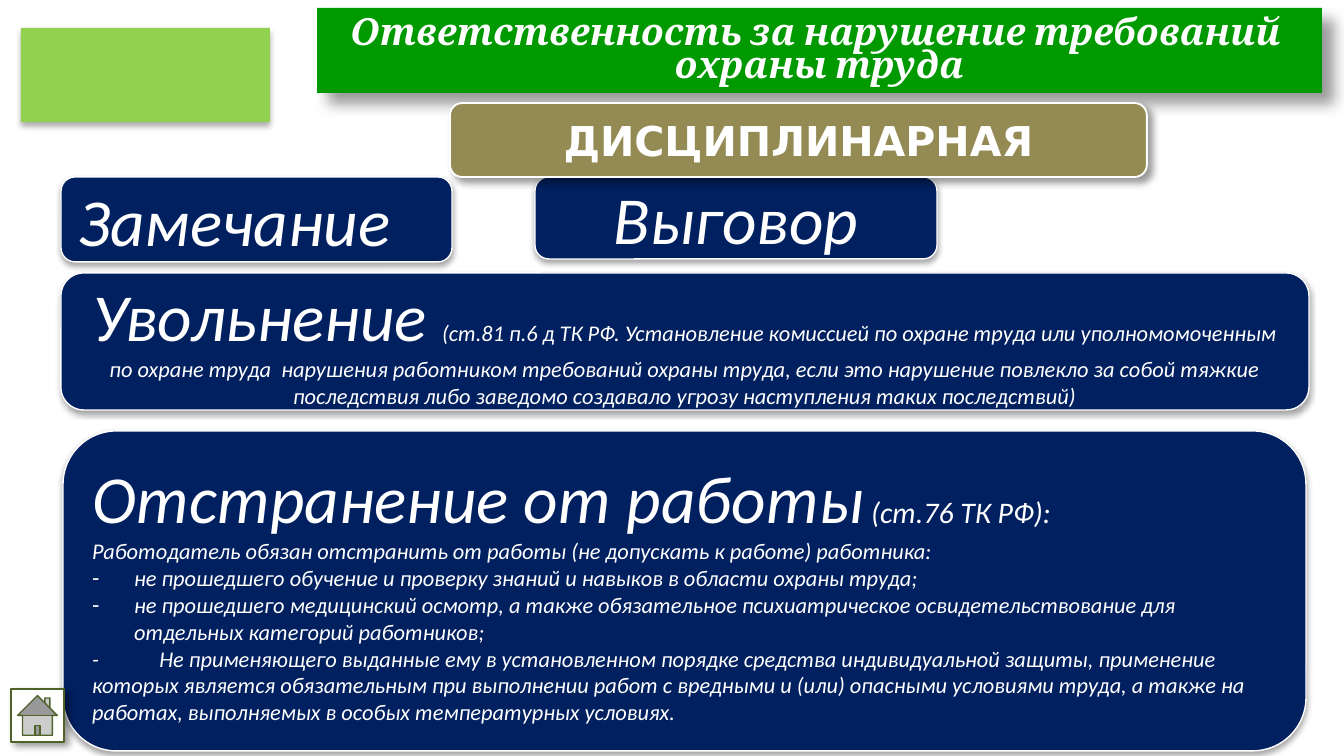
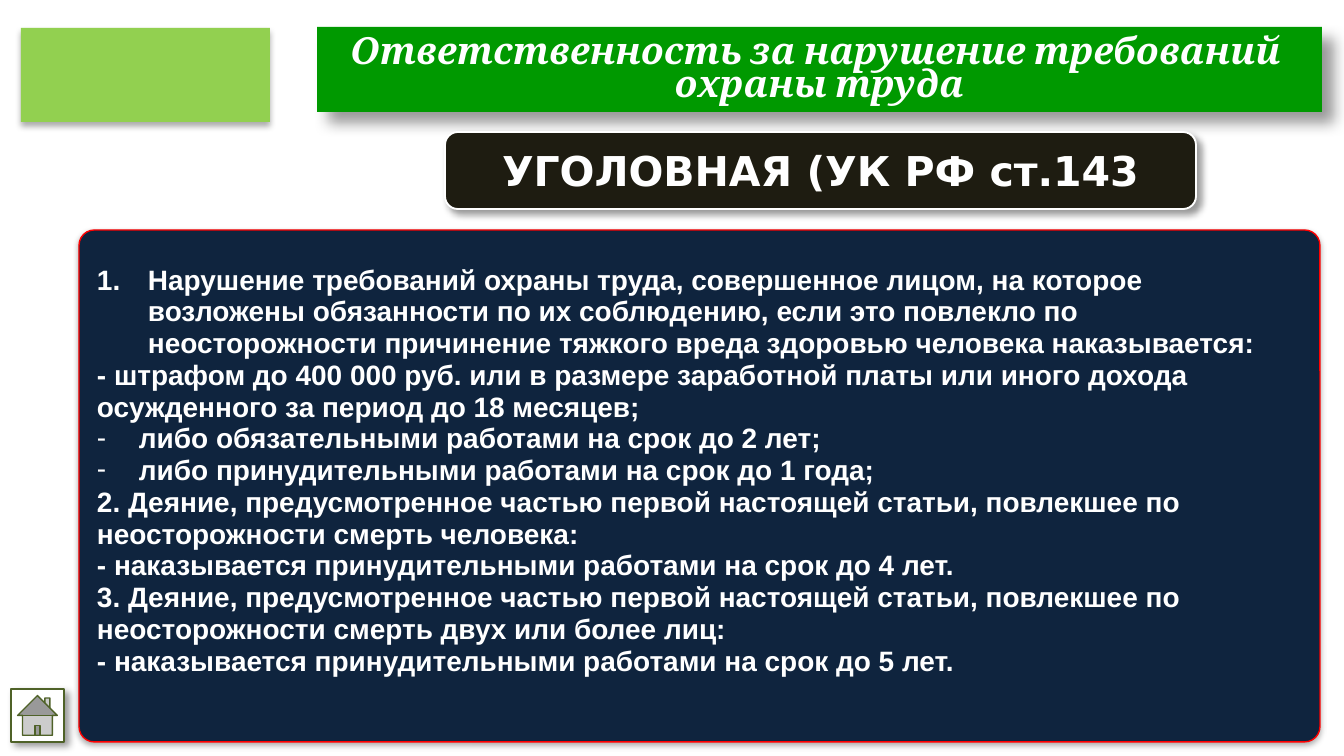
from dataclasses import dataclass

from lxml import etree
from pptx import Presentation
from pptx import util as u
from pptx.dml.color import RGBColor
from pptx.enum import shapes, text
from pptx.oxml.ns import qn

PX = 914400 / 134.4
COLORS = {
    "white": "FFFFFF", "black": "000000", "green": "009900", "lime": "92D050",
    "navy": "002060", "ink": "0F243E", "khaki": "948A54", "dark": "1E1C11",
    "olive": "4F6228", "red": "FF0000",
}
# opacity %, blur pt, distance pt, angle
SHADOWS = {
    "title": (40, 8, 8, 45), "card": (35, 3.1, 1.8, 90),
    "band": (40, 4, 3, 45), "block": (32, 3.5, 2.2, 90),
}
TITLE = "Ответственность за нарушение требований \nохраны труда"
HANG = 42
LEFT, CENTER = text.PP_ALIGN.LEFT, text.PP_ALIGN.CENTER
SHAPE = shapes.MSO_SHAPE


@dataclass
class Style:
    font: str
    size: float
    bold: bool = False
    italic: bool = False
    spacing: float = 0


@dataclass
class Item:
    """One paragraph; a number marker replaces the dash, tab is a stop in px."""
    runs: list
    marker: str = ""
    hang: int = 0
    tab: int = 0


TITLE_STYLE = Style("Cambria", 20, bold=True, italic=True, spacing=18)
BAND_STYLE = Style("DejaVu Sans", 22, bold=True)
CARD_STYLE = Style("Calibri", 36, italic=True)
NOTE_STYLE = Style("Calibri", 12, italic=True)
LAW_STYLE = Style("Arial", 15, bold=True, spacing=17)


def emu(px):
    return u.Emu(round(px * PX))


def rgb(name):
    return RGBColor.from_string(COLORS[name])


def child(parent, tag, **attrs):
    return etree.SubElement(parent, qn(tag), {k: str(v) for k, v in attrs.items()})


def paint(sp, fill, line, shadow):
    """Set fill, outline as (colour, points) or None, and outer shadow."""
    sp.fill.solid()
    sp.fill.fore_color.rgb = rgb(fill)
    if line:
        sp.line.color.rgb = rgb(line[0])
        sp.line.width = u.Pt(line[1])
    else:
        sp.line.fill.background()
    sp.shadow.inherit = False
    alpha, blur, dist, angle = SHADOWS[shadow]
    effects = sp._element.spPr.find(qn("a:effectLst"))
    outer = child(effects, "a:outerShdw", blurRad=u.Pt(blur), dist=u.Pt(dist),
                  dir=angle * 60000, algn="ctr", rotWithShape=0)
    child(child(outer, "a:srgbClr", val=COLORS["black"]), "a:alpha", val=alpha * 1000)


def add_block(slide, kind, box, fill, line, shadow):
    sp = slide.shapes.add_shape(kind, *map(emu, box))
    paint(sp, fill, line, shadow)
    return sp


def round_placeholder(sp, box, fill, line, shadow):
    """Move a placeholder and give it a rounded outline."""
    sp.left, sp.top, sp.width, sp.height = map(emu, box)
    spPr = sp._element.spPr
    geom = child(spPr, "a:prstGeom", prst="roundRect")
    child(geom, "a:avLst")
    spPr.insert(1, geom)
    paint(sp, fill, line, shadow)
    return sp


def set_marker(p, item):
    pPr = p._p.get_or_add_pPr()
    pPr.set("marL", str(emu(item.hang)))
    pPr.set("indent", str(-emu(item.hang)))
    if item.marker == "1.":
        child(pPr, "a:buFont", typeface="+mj-lt")
        child(pPr, "a:buAutoNum", type="arabicPeriod")
    elif item.marker:
        child(pPr, "a:buFontTx")
        child(pPr, "a:buChar", char=item.marker)
    else:
        child(pPr, "a:buNone")
    if item.tab:
        child(child(pPr, "a:tabLst"), "a:tab", pos=emu(item.tab), algn="l")


def write(sp, items, style, align=CENTER):
    """Fill a shape; a run is a string, or (string, size) to change the size."""
    tf = sp.text_frame
    tf.word_wrap = True
    tf.auto_size = text.MSO_AUTO_SIZE.NONE
    tf.vertical_anchor = text.MSO_ANCHOR.MIDDLE
    for i, item in enumerate(items):
        p = tf.paragraphs[0] if i == 0 else tf.add_paragraph()
        set_marker(p, item)
        p.alignment = align
        p.space_before = u.Pt(0)
        if style.spacing:
            p.line_spacing = u.Pt(style.spacing)
        f = p.font
        f.name, f.size, f.bold, f.italic = style.font, u.Pt(style.size), style.bold, style.italic
        f.color.rgb = rgb("white")
        for run in item.runs:
            if isinstance(run, tuple):
                r = p.add_run()
                r.text, r.font.size = run[0], u.Pt(run[1])
            else:
                for n, part in enumerate(run.split("\n")):
                    if n:
                        p.add_line_break()
                    p.add_run().text = part


def add_title(slide, top):
    sp = round_placeholder(slide.shapes.title, (317, top, 1005, 85), "green", None, "title")
    tf = sp.text_frame
    tf.margin_left = tf.margin_right = 0
    tf.margin_top, tf.margin_bottom = emu(11), emu(7)
    write(sp, [Item([TITLE])], TITLE_STYLE)


def add_band(slide, box, fill, label):
    sp = add_block(slide, SHAPE.ROUNDED_RECTANGLE, box, fill, ("white", 1), "band")
    write(sp, [Item([label])], BAND_STYLE)
    return sp


def add_card(slide, box, runs, align=CENTER):
    sp = add_block(slide, SHAPE.ROUNDED_RECTANGLE, box, "navy", ("white", 0.75), "card")
    write(sp, [Item(runs)], CARD_STYLE, align)


def add_slide(prs, title_top):
    """Start a slide with the shared title, home button and corner block."""
    s = prs.slides.add_slide(prs.slide_layouts[1])
    add_title(s, title_top)
    add_block(s, SHAPE.ACTION_BUTTON_HOME, (11, 689, 53, 53), "white", ("olive", 0.75), "band")
    add_block(s, SHAPE.RECTANGLE, (21, 28, 249, 94), "lime", None, "block")
    return s


def build_disciplinary(prs):
    s = add_slide(prs, 8)
    add_card(s, (61, 177, 391, 85), ["Замечание"], LEFT)
    add_card(s, (535, 177, 402, 82), ["Выговор"])
    add_card(s, (61, 273, 1248, 137), [
        "Увольнение ",
        ("(ст.81 п.6 д ТК РФ. Установление комиссией по охране труда или уполномомоченным "
         "по охране труда  нарушения работником требований охраны труда, если это нарушение "
         "повлекло за собой тяжкие последствия либо заведомо создавало угрозу наступления "
         "таких последствий)", 12)])
    add_band(s, (450, 103, 697, 74), "khaki", "ДИСЦИПЛИНАРНАЯ")
    panel = round_placeholder(s.placeholders[1], (63, 431, 1243, 320),
                              "navy", ("white", 0.75), "card")
    write(panel, [
        Item([("Отстранение от работы", 36), (" (ст.76 ТК РФ):", 16)]),
        Item(["Работодатель обязан отстранить от работы (не допускать к работе) работника:"]),
        Item(["не прошедшего обучение и проверку знаний и навыков в области охраны труда;"],
             "-", HANG),
        Item(["не прошедшего медицинский осмотр, а также обязательное психиатрическое "
              "освидетельствование для отдельных категорий работников;"], "-", HANG),
        Item(["-\tНе применяющего выданные ему в установленном порядке средства "
              "индивидуальной защиты, применение которых является обязательным при "
              "выполнении работ с вредными и (или) опасными условиями труда, а также на "
              "работах, выполняемых в особых температурных условиях."], tab=HANG),
    ], NOTE_STYLE, LEFT)


def build_criminal(prs):
    s = add_slide(prs, 27)
    panel = round_placeholder(s.placeholders[1], (79, 230, 1241, 512),
                              "ink", ("red", 0.75), "card")
    panel.adjustments[0] = 0.03
    panel.text_frame.margin_bottom = emu(38)
    deed = "Деяние, предусмотренное частью первой настоящей статьи, повлекшее по неосторожности смерть"
    penalty = "- наказывается принудительными работами на срок до"
    write(panel, [
        Item(["Нарушение требований охраны труда, совершенное лицом, на которое возложены "
              "обязанности по их соблюдению, если это повлекло по неосторожности причинение "
              "тяжкого вреда здоровью человека наказывается:"], "1.", 51),
        Item(["- штрафом до 400 000 руб. или в размере заработной платы или иного дохода "
              "осужденного за период до 18 месяцев;"]),
        Item(["либо обязательными работами на срок до 2 лет;"], "-", HANG),
        Item(["либо принудительными работами на срок до 1 года;"], "-", HANG),
        Item([f"2. {deed} человека:"]),
        Item([f"{penalty} 4 лет."]),
        Item([f"3. {deed} двух или более лиц:"]),
        Item([f"{penalty} 5 лет."]),
    ], LAW_STYLE, LEFT)
    add_band(s, (445, 132, 751, 77), "dark", "УГОЛОВНАЯ (УК РФ ст.143")


def main():
    prs = Presentation()
    prs.slide_width, prs.slide_height = emu(1344), emu(756)
    build_disciplinary(prs)
    build_criminal(prs)
    prs.save("out.pptx")


if __name__ == "__main__":
    main()
